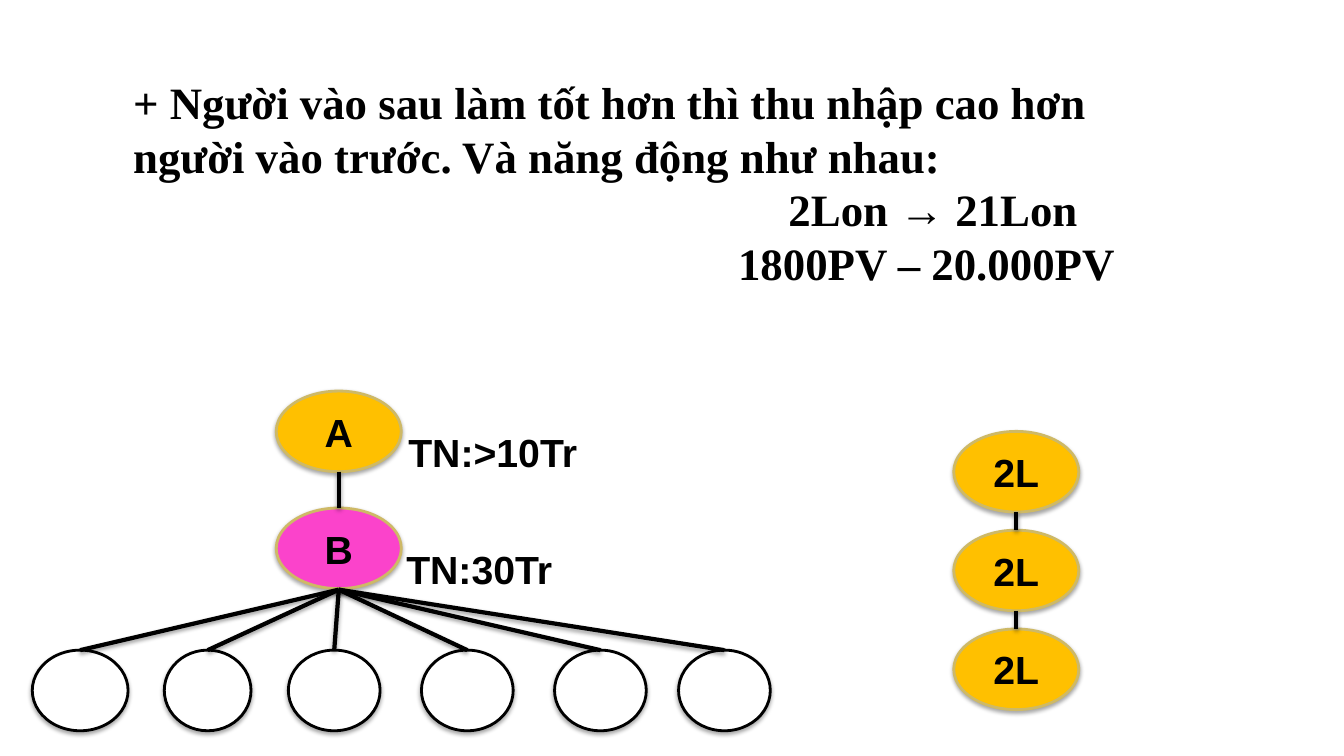
from lxml.etree import SubElement
from pptx import Presentation
from pptx.dml.color import RGBColor
from pptx.enum.shapes import MSO_CONNECTOR, MSO_SHAPE
from pptx.enum.text import MSO_ANCHOR, PP_ALIGN
from pptx.oxml.ns import qn
from pptx.util import Inches, Pt

BLACK, WHITE, GOLD, AMBER, PINK = "000000", "FFFFFF", "CEB966", "FFC000", "FB43CB"
MEMBER_WIDTH, OVAL_HEIGHT = 1.24, 0.8
RECRUIT_TOP = 6.45


def color(code):
    return RGBColor.from_string(code)


def add_shadow(element, distance, opacity):
    effects = SubElement(element.spPr, qn("a:effectLst"))
    shadow = SubElement(effects, qn("a:outerShdw"), blurRad=str(Pt(3)),
                        dist=str(Pt(distance)), dir="5400000", rotWithShape="0")
    tint = SubElement(shadow, qn("a:srgbClr"), val=BLACK)
    SubElement(tint, qn("a:alpha"), val=str(opacity * 1000))


def set_margins(frame):
    frame.margin_left = frame.margin_right = Inches(0.05)
    frame.margin_top = frame.margin_bottom = Inches(0.05)


def format_text(paragraph, font_name, size):
    for run in paragraph.runs:
        run.font.name = font_name
        run.font.size = Pt(size)
        run.font.bold = True
        run.font.color.rgb = color(BLACK)


def add_oval(slide, left, top, width, fill, outline, label=""):
    oval = slide.shapes.add_shape(MSO_SHAPE.OVAL, Inches(left), Inches(top),
                                  Inches(width), Inches(OVAL_HEIGHT))
    oval.fill.solid()
    oval.fill.fore_color.rgb = color(fill)
    oval.line.color.rgb = color(outline)
    oval.line.width = Pt(2)
    add_shadow(oval._element, 1.8, 35)
    if label:
        frame = oval.text_frame
        set_margins(frame)
        frame.vertical_anchor = MSO_ANCHOR.MIDDLE
        frame.text = label
        frame.paragraphs[0].alignment = PP_ALIGN.CENTER
        format_text(frame.paragraphs[0], "Arial", 28)


def add_link(slide, x1, y1, x2, y2):
    link = slide.shapes.add_connector(MSO_CONNECTOR.STRAIGHT, Inches(x1), Inches(y1),
                                      Inches(x2), Inches(y2))
    link.line.color.rgb = color(BLACK)
    link.line.width = Pt(3)
    add_shadow(link._element, 1.6, 38)


def add_text(slide, left, top, width, height, lines, font_name, size, wrap):
    box = slide.shapes.add_textbox(Inches(left), Inches(top), Inches(width), Inches(height))
    frame = box.text_frame
    frame.word_wrap = wrap
    set_margins(frame)
    frame.text = "\n".join(text for text, _ in lines)
    for paragraph, (_, indent) in zip(frame.paragraphs, lines):
        paragraph._p.get_or_add_pPr().set("marL", str(Inches(indent)))
        format_text(paragraph, font_name, size)


def add_chain(slide, left, top, pitch, members):
    center = left + MEMBER_WIDTH / 2
    for level, (label, fill) in enumerate(members):
        member_top = top + level * pitch
        add_oval(slide, left, member_top, MEMBER_WIDTH, fill, GOLD, label)
        if level:
            add_link(slide, center, member_top - pitch + OVAL_HEIGHT, center, member_top)


def add_recruits(slide, sponsor_x, sponsor_y, recruits):
    for left, width in recruits:
        add_oval(slide, left, RECRUIT_TOP, width, WHITE, BLACK)
        add_link(slide, sponsor_x, sponsor_y, left + width / 2, RECRUIT_TOP)


def main():
    deck = Presentation()
    deck.slide_width, deck.slide_height = Inches(13.33), Inches(7.5)
    slide = deck.slides.add_slide(deck.slide_layouts[6])

    statement = [
        ("+ Người vào sau làm tốt hơn thì thu nhập cao hơn người vào trước. "
         "Và năng động như nhau:", 0),
        ("2Lon → 21Lon", 6.5),
        ("1800PV – 20.000PV", 6),
    ]
    add_text(slide, 1.27, 0.69, 10.59, 2.25, statement, "Times New Roman", 32, True)

    add_chain(slide, 2.74, 3.88, 1.16, [("A", AMBER), ("B", PINK)])
    add_recruits(slide, 3.36, 5.85, [(0.32, 0.95), (1.63, 0.86), (2.86, 0.91),
                                     (4.18, 0.91), (5.5, 0.91), (6.73, 0.91)])
    add_text(slide, 4, 4.2, 1.82, 0.57, [("TN:>10Tr", 0)], "Arial", 28, False)
    add_text(slide, 3.98, 5.36, 1.59, 0.57, [("TN:30Tr", 0)], "Arial", 28, False)

    add_chain(slide, 9.46, 4.28, 0.98, [("2L", AMBER)] * 3)
    deck.save("out.pptx")


if __name__ == "__main__":
    main()
